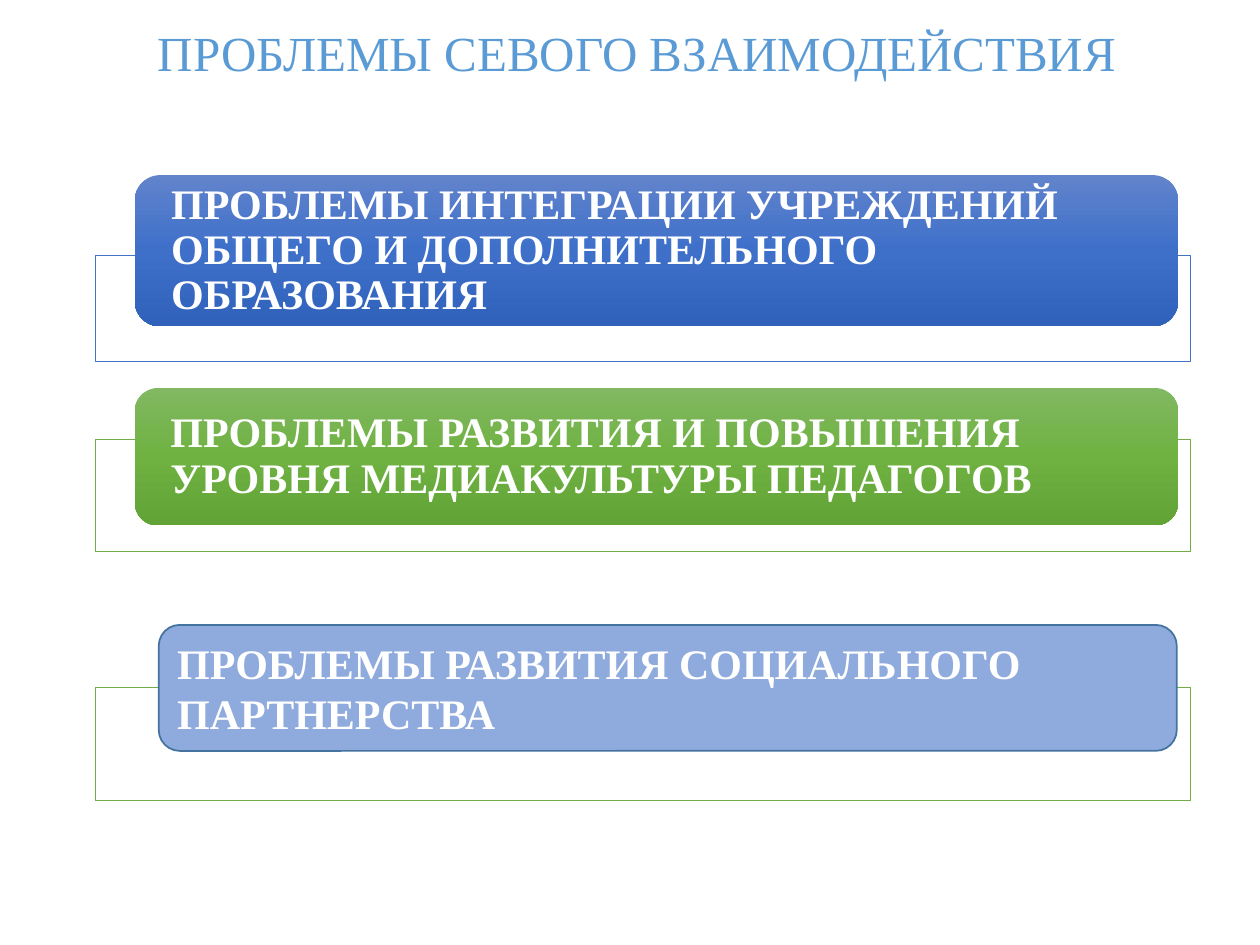
import copy

import lxml.etree
import pptx
import pptx.dml.color
import pptx.enum.shapes
import pptx.enum.text
import pptx.oxml.ns
import pptx.util

Inches = pptx.util.Inches
Pt = pptx.util.Pt
PP_ALIGN = pptx.enum.text.PP_ALIGN
MSO_ANCHOR = pptx.enum.text.MSO_ANCHOR
MSO_SHAPE = pptx.enum.shapes.MSO_SHAPE
qn = pptx.oxml.ns.qn

COLORS = {
    "title": "5B9BD5",
    "white": "FFFFFF",
    "blue": "4472C4",
    "green": "70AD47",
    "periwinkle": "8FAADC",
    "steel": "43739E",
}
BLUE_GRADIENT = ("6183CB", "3E70CA", "3062BB")
GREEN_GRADIENT = ("81B861", "6FB242", "62A336")


def rgb(value):
    return pptx.dml.color.RGBColor.from_string(COLORS.get(value, value))


def write(tf, text, size=24, bold=True, color="white", align=PP_ALIGN.LEFT,
          anchor=MSO_ANCHOR.MIDDLE, spacing=1.0, inset=(0.1, 0.05)):
    """Put one formatted paragraph into a text frame."""
    tf.word_wrap = True
    tf.vertical_anchor = anchor
    tf.margin_left = tf.margin_right = Inches(inset[0])
    tf.margin_top = tf.margin_bottom = Inches(inset[1])
    p = tf.paragraphs[0]
    p.alignment = align
    p.line_spacing = spacing
    r = p.add_run()
    r.text = text
    r.font.name = "Times New Roman"
    r.font.size = Pt(size)
    r.font.bold = bold
    r.font.color.rgb = rgb(color)


class SlideBuilder:
    def __init__(self, prs):
        self.s = prs.slides.add_slide(prs.slide_layouts[6])

    def title(self, box, text):
        sp = self.s.shapes.add_textbox(*map(Inches, box))
        write(sp.text_frame, text, size=28, bold=False, color="title",
              align=PP_ALIGN.CENTER, anchor=MSO_ANCHOR.TOP)

    def shape(self, kind, box, line=None, width=1):
        sp = self.s.shapes.add_shape(kind, *map(Inches, box))
        sp.shadow.inherit = False
        if line:
            sp.line.color.rgb = rgb(line)
            sp.line.width = Pt(width)
        else:
            sp.line.fill.background()
        return sp

    def frame(self, top, height, line):
        """Thin outlined box behind a card, filled with 90% white."""
        sp = self.shape(MSO_SHAPE.RECTANGLE, (0.76, top, 8.69, height), line, 0.5)
        sp.fill.solid()
        sp.fill.fore_color.rgb = rgb("white")
        color = sp.fill._xPr.find(qn("a:solidFill"))[0]
        lxml.etree.SubElement(color, qn("a:alpha")).set("val", "90000")

    def card(self, box, text, fill, line=None, **style):
        """Rounded card; fill is one colour or a top-to-bottom gradient."""
        sp = self.shape(MSO_SHAPE.ROUNDED_RECTANGLE, box, line)
        if isinstance(fill, tuple):
            sp.fill.gradient()
            sp.fill.gradient_angle = 270
            stops = sp.fill._xPr.find(qn("a:gradFill")).find(qn("a:gsLst"))
            stops.insert(1, copy.deepcopy(stops[0]))
            for i, stop in enumerate(sp.fill.gradient_stops):
                stop.position = i / 2
                stop.color.rgb = rgb(fill[i])
        else:
            sp.fill.solid()
            sp.fill.fore_color.rgb = rgb(fill)
        write(sp.text_frame, text, **style)


def main():
    prs = pptx.Presentation()
    prs.slide_width, prs.slide_height = Inches(10), Inches(7.5)
    slide = SlideBuilder(prs)

    # Heading
    slide.title((0.76, 0.13, 8.59, 0.57), "ПРОБЛЕМЫ СЕВОГО ВЗАИМОДЕЙСТВИЯ")

    # Two gradient cards
    gradient_text = dict(spacing=0.9, inset=(0.23, 0))
    slide.frame(2.03, 0.84, "blue")
    slide.card((1.07, 1.39, 8.28, 1.2),
               "ПРОБЛЕМЫ ИНТЕГРАЦИИ УЧРЕЖДЕНИЙ ОБЩЕГО И ДОПОЛНИТЕЛЬНОГО ОБРАЗОВАНИЯ",
               BLUE_GRADIENT, **gradient_text)
    slide.frame(3.49, 0.89, "green")
    slide.card((1.07, 3.08, 8.28, 1.09),
               "ПРОБЛЕМЫ РАЗВИТИЯ И ПОВЫШЕНИЯ УРОВНЯ МЕДИАКУЛЬТУРЫ ПЕДАГОГОВ",
               GREEN_GRADIENT, **gradient_text)

    # Plain outlined card
    slide.frame(5.46, 0.89, "green")
    slide.card((1.26, 4.96, 8.08, 1),
               "ПРОБЛЕМЫ РАЗВИТИЯ СОЦИАЛЬНОГО ПАРТНЕРСТВА",
               "periwinkle", line="steel")

    prs.save("out.pptx")


if __name__ == "__main__":
    main()
